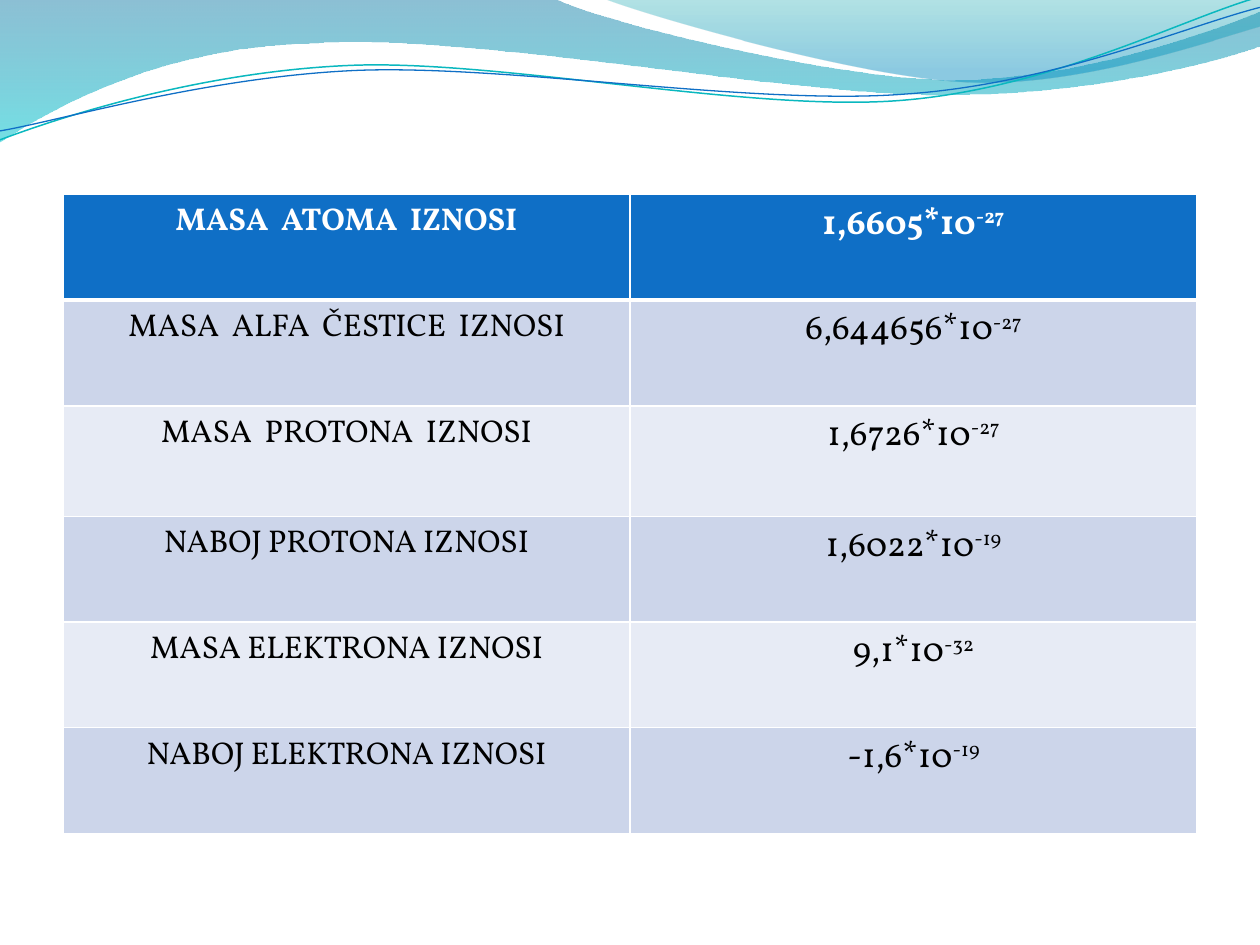
from dataclasses import dataclass

from lxml import etree
from pptx import Presentation
from pptx.dml.color import RGBColor
from pptx.enum.text import PP_ALIGN
from pptx.oxml.ns import qn
from pptx.util import Cm, Pt

CENTER = PP_ALIGN.CENTER


@dataclass(frozen=True)
class Theme:
    font: str = "Vollkorn"
    label_size: float = 18
    value_size: float = 20
    header: str = "0F6FC6"
    bands: tuple = ("CCD5EA", "E7EBF5")
    white: str = "FFFFFF"
    black: str = "000000"
    teal_line: str = "0AB8BF"
    blue_line: str = "0F6FC6"
    # Gradient stops: position, colour, opacity in percent
    wave: tuple = ((0, "0074A1", 45), (1, "00C6CF", 55))
    veil: tuple = ((0, "00A1A9", 30), (0.8, "008BBF", 45))


THEME = Theme()

# Outlines in cm: one point is a straight step, three points are a cubic curve
WAVE = [
    [(0, 0)], [(11.18, -0.03)],
    [(12.09, 0.43), (16.87, 1.6), (19.25, 1.6)],
    [(21.67, 1.6), (24.33, 0.66), (25.4, 0.23)],
    [(25.43, 0.91)],
    [(24.97, 1.12), (22.1, 1.93), (18.95, 1.91)],
    [(15.8, 1.91), (9.7, 0.71), (6.53, 0.86)],
    [(3.28, 0.91), (1.17, 2.11), (-0.03, 2.87)],
    [(0, 0)],
]
VEIL = [
    [(12.17, -0.03)],
    [(12.93, 0.28), (17.32, 1.57), (19.53, 1.65)],
    [(21.74, 1.75), (24.41, 0.81), (25.4, 0.53)],
    [(25.4, 0)],
    [(12.17, -0.03)],
]
TEAL_STRAND = [
    [(0, 2.82)],
    [(1.22, 2.36), (4.01, 1.45), (7.04, 1.32)],
    [(10.03, 1.19), (15.06, 2.26), (18.11, 2.03)],
    [(21.16, 1.8), (23.83, 0.38), (25.35, -0.05)],
]
BLUE_STRAND = [
    [(0, 2.64)],
    [(1.19, 2.44), (4.17, 1.55), (7.19, 1.42)],
    [(10.24, 1.3), (15.16, 2.13), (18.21, 1.9)],
    [(21.23, 1.7), (23.9, 0.53), (25.4, 0.15)],
]

# Label, value, exponent
CONSTANTS = [
    ("MASA  ATOMA  IZNOSI", "1,6605*10", "-27"),
    ("MASA  ALFA  ČESTICE  IZNOSI", "6,644656*10", "-27"),
    ("MASA  PROTONA  IZNOSI", "1,6726*10", "-27"),
    ("NABOJ PROTONA IZNOSI", "1,6022*10", "-19"),
    ("MASA ELEKTRONA IZNOSI", "9,1*10", "-32"),
    ("NABOJ ELEKTRONA IZNOSI", "-1,6*10", "-19"),
]
ROW_HEIGHTS = [2.13, 2.13, 2.23, 2.13, 2.13, 2.13]


def rgb(value):
    return RGBColor.from_string(value)


def add_outline(slide, left, top, outline, close):
    """Lay all points as straight steps, then join triples into cubic curves."""
    points = [(left + Cm(x), top + Cm(y)) for segment in outline for x, y in segment]
    builder = slide.shapes.build_freeform(*points[0])
    builder.add_line_segments(points[1:], close=close)
    shape = builder.convert_to_shape()
    shape.shadow.inherit = False
    steps = iter(list(shape.element.iter(qn("a:lnTo"))))
    for segment in outline[1:]:
        group = [next(steps) for _ in segment]
        if len(group) == 3:
            curve = etree.Element(qn("a:cubicBezTo"))
            group[0].addprevious(curve)
            for step in group:
                curve.append(step[0])
                step.getparent().remove(step)
    return shape


def fill_gradient(shape, stops):
    """Fill from top to bottom with translucent colours."""
    shape.fill.gradient()
    shape.fill.gradient_angle = 270
    for stop, (position, color, _) in zip(shape.fill.gradient_stops, stops):
        stop.position = position
        stop.color.rgb = rgb(color)
    colors = list(shape.element.spPr.iter(qn("a:srgbClr")))
    for color, (_, _, opacity) in zip(colors, stops):
        etree.SubElement(color, qn("a:alpha"), val=str(opacity * 1000))


def add_wave_header(slide, left, top):
    for outline, stops in ((WAVE, THEME.wave), (VEIL, THEME.veil)):
        band = add_outline(slide, left, top, outline, close=True)
        fill_gradient(band, stops)
        band.line.fill.background()
    for outline, color, width in ((TEAL_STRAND, THEME.teal_line, 0.85),
                                  (BLUE_STRAND, THEME.blue_line, 0.75)):
        strand = add_outline(slide, left, top, outline, close=False)
        strand.fill.background()
        strand.line.color.rgb = rgb(color)
        strand.line.width = Pt(width)


def write_text(paragraph, text, *, size, color, bold=False, superscript=False):
    paragraph.alignment = CENTER
    run = paragraph.add_run()
    run.text = text
    run.font.name = THEME.font
    run.font.size = Pt(size)
    run.font.bold = bold
    run.font.color.rgb = rgb(color)
    if superscript:
        run.font._element.set("baseline", "30000")


def set_borders(cell, top, bottom):
    properties = cell._tc.get_or_add_tcPr()
    for side, width in (("L", 1), ("R", 1), ("T", top), ("B", bottom)):
        line = etree.SubElement(properties, qn(f"a:ln{side}"), w=str(Pt(width)))
        solid = etree.SubElement(line, qn("a:solidFill"))
        etree.SubElement(solid, qn("a:srgbClr"), val=THEME.white)


def add_constants_table(slide, left, top, width):
    table = slide.shapes.add_table(len(CONSTANTS), 2, left, top, width,
                                   Cm(sum(ROW_HEIGHTS))).table
    for column in table.columns:
        column.width = width // 2
    for index, (label, value, exponent) in enumerate(CONSTANTS):
        is_header = index == 0
        table.rows[index].height = Cm(ROW_HEIGHTS[index])
        fill = THEME.header if is_header else THEME.bands[(index - 1) % 2]
        style = {"color": THEME.white if is_header else THEME.black, "bold": is_header}
        label_cell, value_cell = table.rows[index].cells
        for cell in (label_cell, value_cell):
            set_borders(cell, top=3 if index == 1 else 1, bottom=3 if is_header else 1)
            cell.fill.solid()
            cell.fill.fore_color.rgb = rgb(fill)
        write_text(label_cell.text_frame.paragraphs[0], label,
                   size=THEME.label_size, **style)
        quantity = value_cell.text_frame.paragraphs[0]
        write_text(quantity, value, size=THEME.value_size, **style)
        write_text(quantity, exponent, size=THEME.value_size, superscript=True, **style)


def main():
    deck = Presentation()
    deck.slide_width, deck.slide_height = Cm(25.4), Cm(19.05)
    slide = deck.slides.add_slide(deck.slide_layouts[6])

    # Decorative waves along the top edge
    add_wave_header(slide, Cm(0), Cm(0))
    # Physical constants
    add_constants_table(slide, Cm(1.27), Cm(3.92), Cm(22.86))

    deck.save("out.pptx")


if __name__ == "__main__":
    main()
